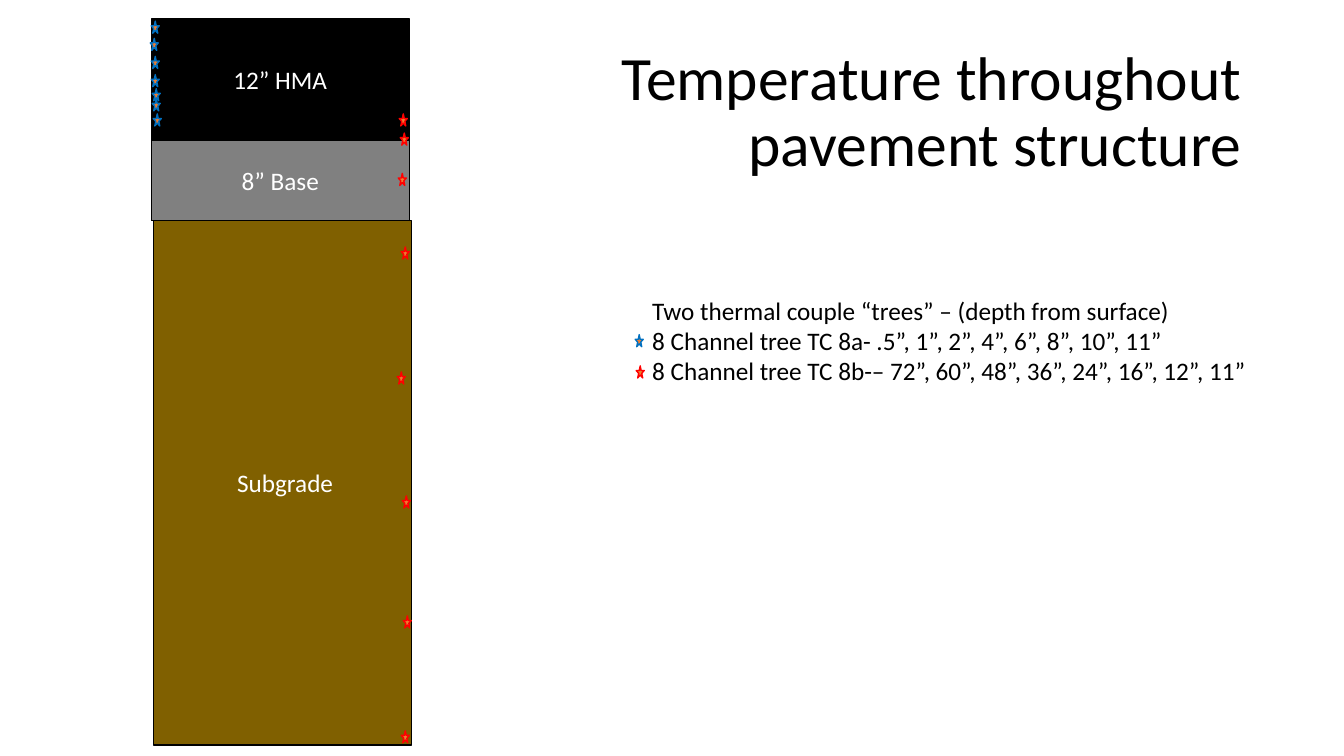
from pptx import Presentation
from pptx.dml.color import RGBColor
from pptx.enum.shapes import MSO_SHAPE as Shape
from pptx.enum.text import MSO_ANCHOR as Anchor, MSO_AUTO_SIZE as AutoSize, PP_ALIGN as Align
from pptx.util import Inches, Pt

COLORS = {
    "black": "000000",
    "white": "FFFFFF",
    "base": "808080",
    "subgrade": "806000",
    "star": "ED7D31",
    "tree_a": "0070C0",
    "tree_b": "FF0000",
}
LAYERS = [
    ("12” HMA", "black", 0, 1.2),
    ("8” Base", "base", 0, 0.8),
    (" Subgrade", "subgrade", 0.02, 5.2),
]
SENSORS = {
    "tree_a": [(0, 0.02), (-0.01, 0.19), (0, 0.37), (0, 0.55),
               (0.01, 0.69), (0.01, 0.79), (0.02, 0.94)],
    "tree_b": [(2.46, 0.94), (2.47, 1.13), (2.45, 1.53), (2.48, 2.26),
               (2.44, 3.5), (2.49, 4.73), (2.5, 5.92), (2.48, 7.06)],
}
LEGEND = [
    "Two thermal couple “trees” – (depth from surface)",
    "8 Channel tree TC 8a- .5”, 1”, 2”, 4”, 6”, 8”, 10”, 11”",
    "8 Channel tree TC 8b-– 72”, 60”, 48”, 36”, 24”, 16”, 12”, 11”",
]
LEGEND_STARS = {"tree_a": (-0.07, 0.44), "tree_b": (-0.06, 0.75)}


def rgb(name):
    return RGBColor.from_string(COLORS[name])


def style_text(frame, size, color, align):
    for paragraph in frame.paragraphs:
        paragraph.alignment = align
        for run in paragraph.runs:
            run.font.name = "Calibri"
            run.font.size = Pt(size)
            run.font.color.rgb = rgb(color)


def add_outlined(slide, kind, left, top, width, height, fill, line):
    shape = slide.shapes.add_shape(
        kind, Inches(left), Inches(top), Inches(width), Inches(height))
    shape.shadow.inherit = False
    shape.fill.solid()
    shape.fill.fore_color.rgb = rgb(fill)
    shape.line.color.rgb = rgb(line)
    shape.line.width = Pt(1)
    return shape


def add_star(slide, left, top, tree):
    add_outlined(slide, Shape.STAR_5_POINT, left, top, 0.08, 0.12, "star", tree)


def add_title(slide, left, top, width, height):
    title = slide.shapes.title
    title.left, title.top = Inches(left), Inches(top)
    title.width, title.height = Inches(width), Inches(height)
    frame = title.text_frame
    frame.text = "Temperature throughout\vpavement structure"
    frame.auto_size = AutoSize.NONE
    frame.vertical_anchor = Anchor.MIDDLE
    frame.paragraphs[0].line_spacing = 0.9
    style_text(frame, 44, "black", Align.RIGHT)


def add_pavement(slide, left, top, width):
    layer_top = top
    for label, color, shift, height in LAYERS:
        layer = add_outlined(slide, Shape.RECTANGLE, left + shift, layer_top,
                             width, height, color, "black")
        layer.text_frame.text = label
        layer.text_frame.vertical_anchor = Anchor.MIDDLE
        style_text(layer.text_frame, 18, "white", Align.CENTER)
        layer_top += height
    for tree, offsets in SENSORS.items():
        for across, depth in offsets:
            add_star(slide, left + across, top + depth, tree)


def add_legend(slide, left, top, width, height):
    legend = slide.shapes.add_textbox(
        Inches(left), Inches(top), Inches(width), Inches(height))
    frame = legend.text_frame
    frame.text = "\n".join(LEGEND)
    frame.word_wrap = False
    frame.auto_size = AutoSize.SHAPE_TO_FIT_TEXT
    style_text(frame, 18, "black", Align.LEFT)
    for tree, (across, down) in LEGEND_STARS.items():
        add_star(slide, left + across, top + down, tree)


def main():
    deck = Presentation()
    deck.slide_width, deck.slide_height = Inches(13.33), Inches(7.5)
    slide = deck.slides.add_slide(deck.slide_layouts[5])
    add_title(slide, 0.92, 0.4, 11.5, 1.45)
    add_pavement(slide, 1.5, 0.19, 2.56)
    add_legend(slide, 6.37, 2.88, 6.15, 1.01)
    deck.save("out.pptx")


if __name__ == "__main__":
    main()
